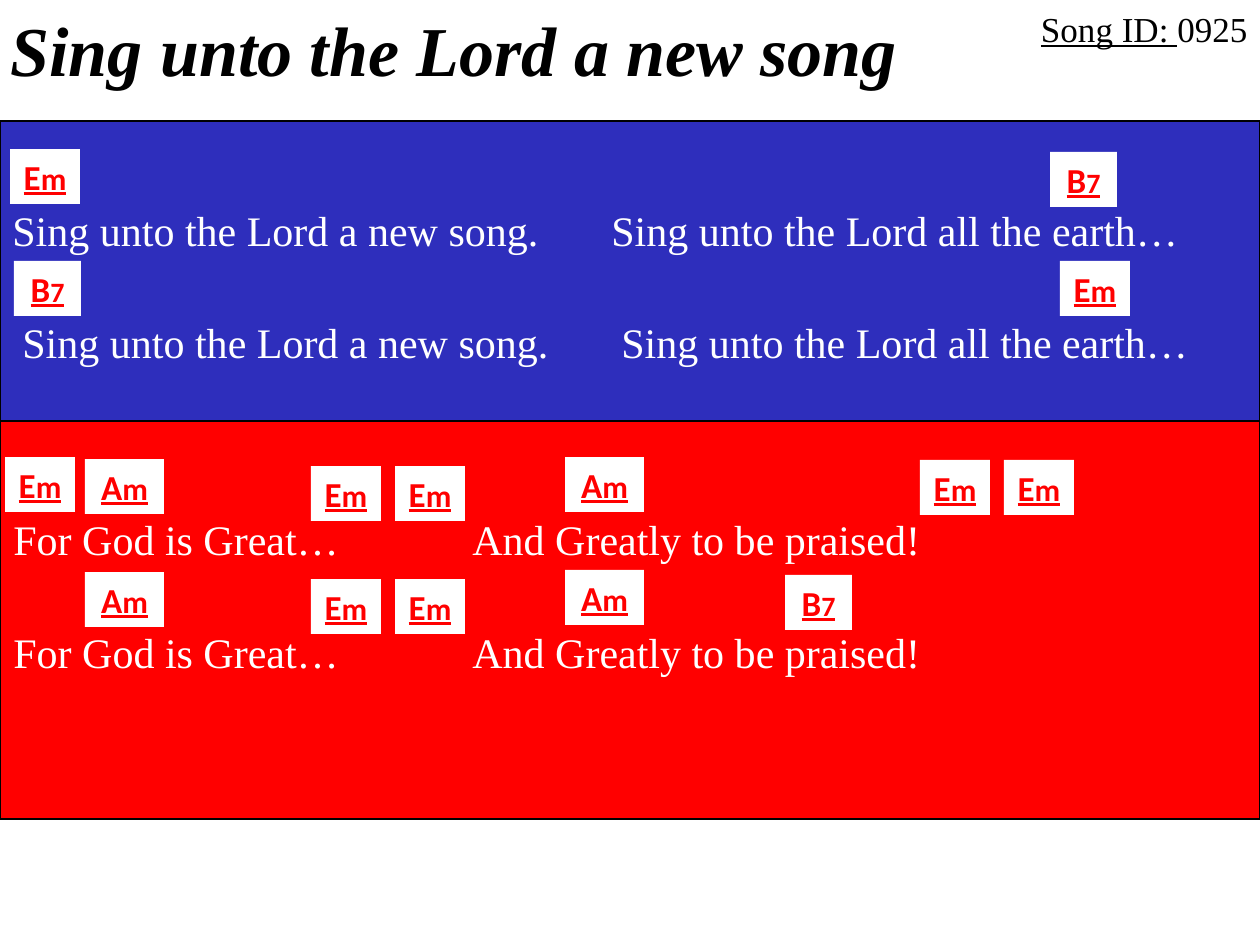
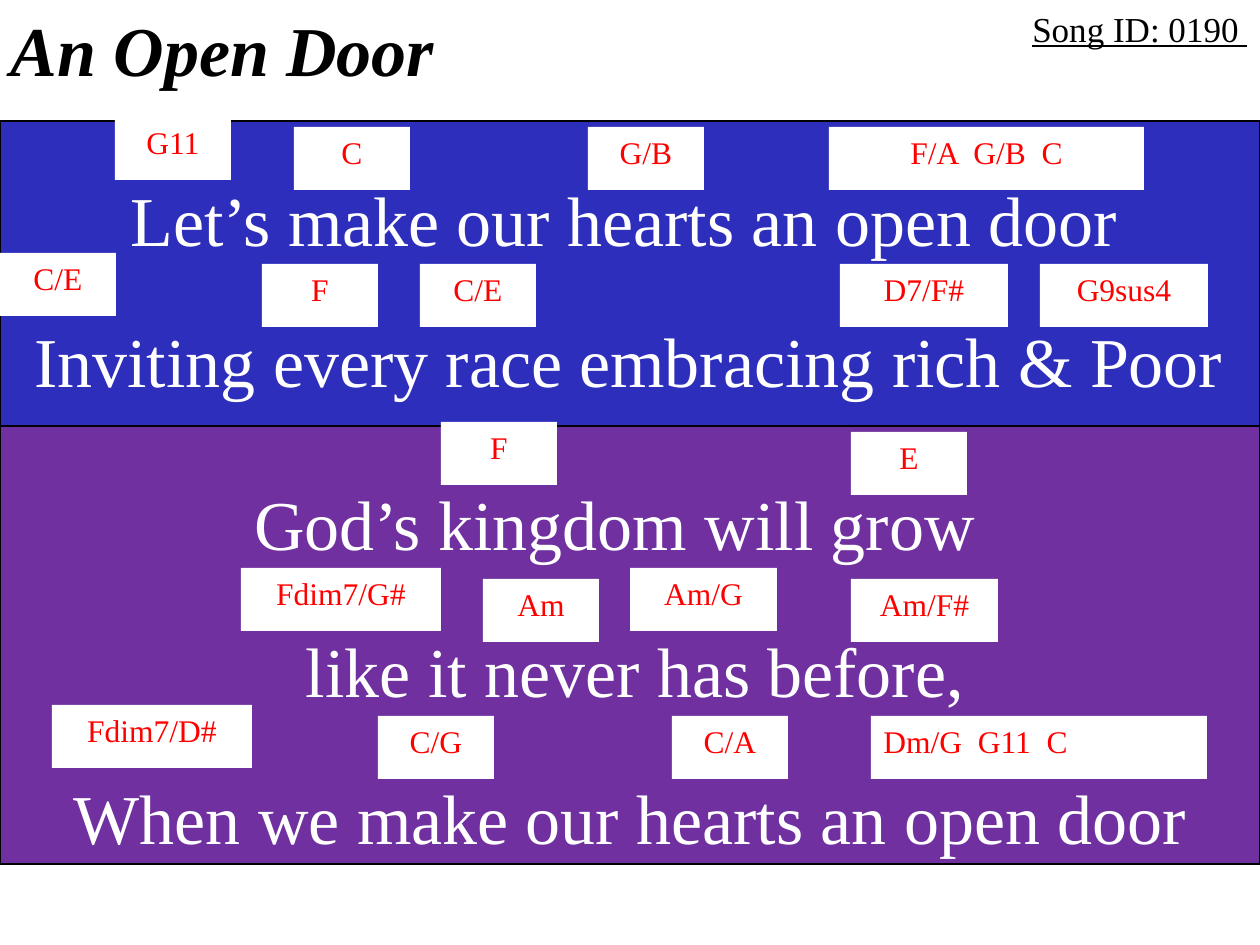
"""Build two chord sheets, each with a title, a song number and two bands of lyrics."""
import dataclasses

import pptx
import pptx.dml.color
import pptx.enum.shapes
import pptx.enum.text
import pptx.util

PX = 914400 / 126
ALIGN = pptx.enum.text.PP_ALIGN


@dataclasses.dataclass(frozen=True)
class Theme:
    """Hold the colours, fonts and type sizes."""
    white: str = "FFFFFF"
    black: str = "000000"
    red: str = "FF0000"
    blue: str = "2E2EBC"
    purple: str = "7030A0"
    serif: str = "Times New Roman"
    sans: str = "Calibri"
    title: int = 40
    verse: int = 24
    label: int = 20
    chord: int = 18
    digit: int = 16
    rule: float = 0.75


THEME = Theme()


def emu(box):
    """Turn a box in px into EMU."""
    return [round(side * PX) for side in box]


def shade(code):
    """Return the colour of a hex code."""
    return pptx.dml.color.RGBColor.from_string(code)


def write(shape, *runs, align=ALIGN.LEFT, size=THEME.label, color=THEME.black,
          font=THEME.serif, bold=False, slant=False, under=False):
    """Fill a shape with runs, each plain text or a pair of text and changes."""
    frame = shape.text_frame
    frame.word_wrap = True
    frame.auto_size = pptx.enum.text.MSO_AUTO_SIZE.NONE
    frame.vertical_anchor = pptx.enum.text.MSO_ANCHOR.TOP
    line = frame.paragraphs[0]
    line.alignment = align
    for item in runs:
        words, change = (item, {}) if isinstance(item, str) else item
        run = line.add_run()
        run.text = words
        run.font.name = font
        run.font.size = pptx.util.Pt(change.get("size", size))
        run.font.color.rgb = shade(color)
        run.font.bold = bold
        run.font.italic = slant
        run.font.underline = change.get("under", under)


def block(slide, box, fill, edge=None):
    """Add a filled rectangle, with an edge if a colour is given."""
    kind = pptx.enum.shapes.MSO_SHAPE.RECTANGLE
    shape = slide.shapes.add_shape(kind, *emu(box))
    shape.shadow.inherit = False
    shape.fill.solid()
    shape.fill.fore_color.rgb = shade(fill)
    if edge:
        shape.line.color.rgb = shade(edge)
        shape.line.width = pptx.util.Pt(THEME.rule)
    else:
        shape.line.fill.background()
    return shape


def head(slide, name, box, *number):
    """Place the song title and, in the given box, the song number."""
    title = slide.shapes.title
    title.left, title.top, title.width, title.height = emu((-2, 0, 959, 97))
    write(title, name, size=THEME.title, bold=True, slant=True)
    write(block(slide, box, THEME.white), *number, align=ALIGN.RIGHT, under=True)


def verse(slide, band, lines, **form):
    """Place lines of lyrics relative to a band."""
    left, top = band[:2]
    for x, y, width, height, words in lines:
        box = (left + x, top + y, width, height)
        shape = slide.shapes.add_textbox(*emu(box))
        write(shape, words, color=THEME.white, **form)


def short(slide, band, chords):
    """Place bold chords with a small suffix relative to a band."""
    wide = {"Em": 70, "Am": 79, "B7": 67}
    for x, y, name in chords:
        box = (band[0] + x, band[1] + y, wide[name], 55)
        small = THEME.digit if name[1].isdigit() else THEME.chord
        write(block(slide, box, THEME.white), name[0], (name[1], {"size": small}),
              align=ALIGN.CENTER, color=THEME.red, font=THEME.sans,
              bold=True, under=True)


def plain(slide, band, chords):
    """Place plain chords relative to a band."""
    for x, y, width, name, *align in chords:
        box = (band[0] + x, band[1] + y, width, 63)
        write(block(slide, box, THEME.white), name, size=THEME.chord,
              color=THEME.red, align=align[0] if align else ALIGN.CENTER)


def sheet(slide, bands, draw, **form):
    """Paint the bands from the bottom up, then set their lyrics and chords."""
    for box, fill, *_ in reversed(bands):
        block(slide, box, fill, THEME.black)
    for box, _, lines, chords in bands:
        verse(slide, box, lines, **form)
        draw(slide, box, chords)


def praise(slide):
    """Build the sheet of the first song."""
    head(slide, "Sing unto the Lord a new song", (955, 1, 305, 55),
         "Song ID: ", ("0925", {"under": False}))
    sing = [(x + shift, y, width, 63, words)
            for shift, y in ((0, 77), (10, 189))
            for x, width, words in (
                (0, 599, "Sing unto the Lord a new song."),
                (599, 650, "Sing unto the Lord all the earth…"))]
    great = [(x, y, width, 63, words)
             for y in (91, 204)
             for x, width, words in (
                 (1, 459, "For God is Great…"),
                 (460, 800, "And Greatly to be praised!"))]
    twice = [(x, y + drop, name)
             for drop in (0, 113)
             for x, y, name in ((85, 43, "Am"), (311, 50, "Em"),
                                (395, 50, "Em"), (565, 41, "Am"))]
    sheet(slide, [
        ((0, 121, 1260, 300), THEME.blue, sing,
         [(10, 28, "Em"), (1050, 31, "B7"), (14, 140, "B7"), (1060, 140, "Em")]),
        ((0, 416, 1260, 403), THEME.red, great,
         twice + [(5, 41, "Em"), (920, 44, "Em"), (1004, 44, "Em"),
                  (785, 159, "B7")]),
    ], short, size=THEME.verse)


def door(slide):
    """Build the sheet of the second song."""
    head(slide, "An Open Door", (757, 1, 503, 55), "Song ID: 0190 ")
    sheet(slide, [
        ((0, 121, 1260, 305), THEME.blue,
         [(73, 49, 1102, 97, "Let’s make our hearts an open door"),
          (-2, 190, 1261, 97, "Inviting every race embracing rich & Poor")],
         [(115, -4, 116, "G11"), (294, 6, 116, "C"), (588, 6, 116, "G/B"),
          (829, 6, 315, "F/A  G/B  C"), (0, 132, 116, "C/E"),
          (262, 143, 116, "F"), (420, 143, 116, "C/E"),
          (840, 143, 168, "D7/F#"), (1040, 143, 168, "G9sus4")]),
        ((0, 418, 1260, 446), THEME.purple,
         [(147, 56, 935, 97, "God’s kingdom will grow"),
          (199, 203, 872, 97, "like it never has before,"),
          (0, 350, 1260, 97, "When we make our hearts an open door")],
         [(441, 4, 116, "F"), (851, 14, 116, "E"),
          (241, 150, 200, "Fdim7/G#"), (483, 161, 116, "Am"),
          (630, 150, 147, "Am/G"), (851, 161, 147, "Am/F#"),
          (52, 287, 200, "Fdim7/D#"), (378, 298, 116, "C/G"),
          (672, 298, 116, "C/A"),
          (871, 298, 336, "Dm/G  G11  C", ALIGN.LEFT)]),
    ], plain, size=THEME.title, align=ALIGN.CENTER)


def main():
    """Make the deck and save it."""
    deck = pptx.Presentation()
    deck.slide_width, deck.slide_height = emu((1260, 945))
    for build in (praise, door):
        build(deck.slides.add_slide(deck.slide_layouts[5]))
    deck.save("out.pptx")


if __name__ == "__main__":
    main()
